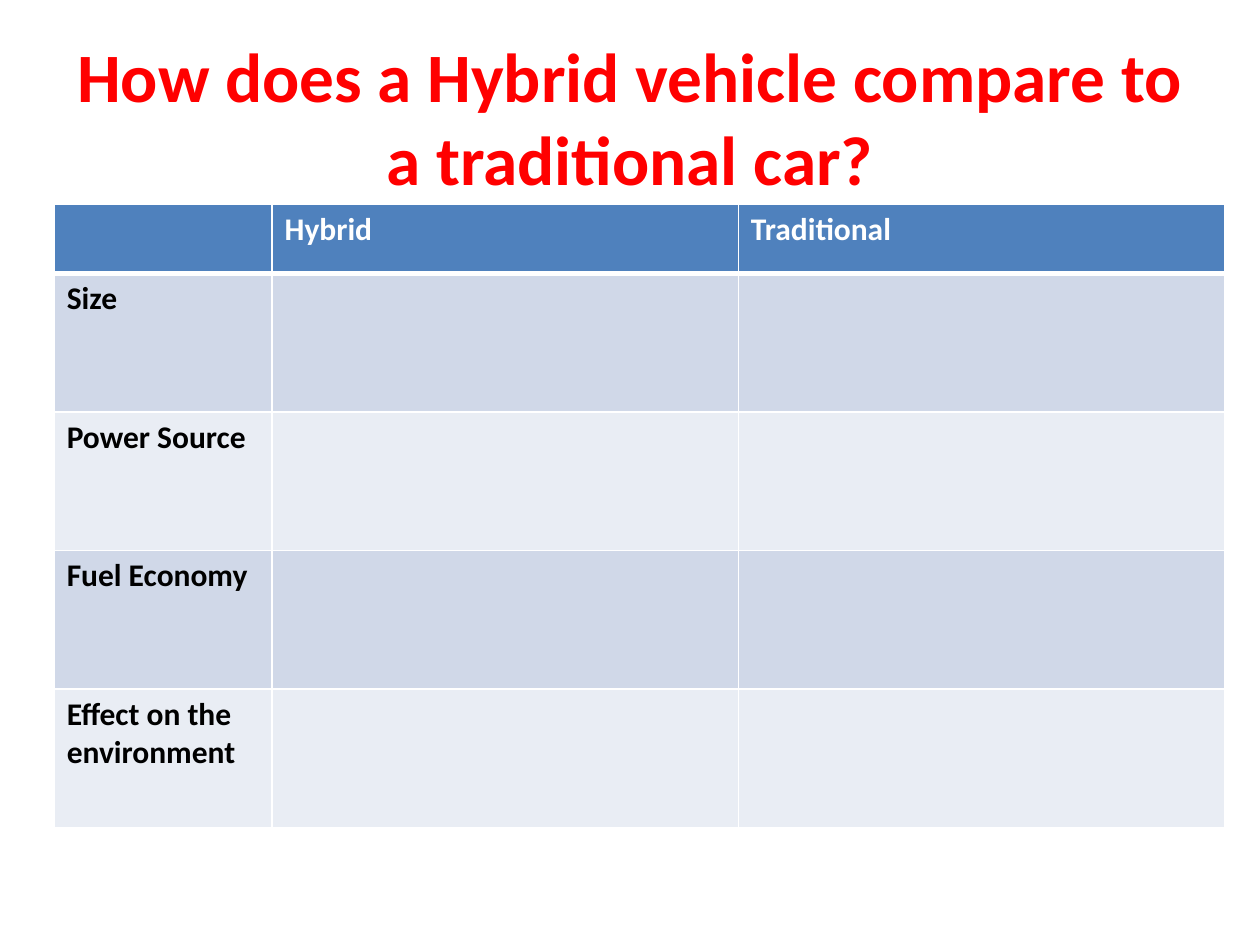
import pptx
import pptx.dml.color
import pptx.enum.text
import pptx.oxml
import pptx.oxml.ns
import pptx.util
from pptx.util import Inches

WHITE = "FFFFFF"
HEADER_FILL = "4F81BD"
BAND_FILLS = ("D0D8E8", "E9EDF4")
COLUMN_WIDTHS = (1.73, 3.7, 3.86)
ROW_HEIGHTS = (0.55, 1.1, 1.1, 1.1, 1.1)
ROWS = (
    ("", "Hybrid", "Traditional"),
    ("Size", "", ""),
    ("Power Source", "", ""),
    ("Fuel Economy", "", ""),
    ("Effect on the environment", "", ""),
)


def color(value):
    """Turn a hex string into a colour."""
    return pptx.dml.color.RGBColor.from_string(value)


def style_font(font, size, value):
    """Apply the bold Calibri face in the given size and colour."""
    font.name = "Calibri"
    font.size = pptx.util.Pt(size)
    font.bold = True
    font.color.rgb = color(value)


def add_border(cell, side, width):
    """Draw a white line on one side (L, R, T or B) of a cell."""
    line = pptx.oxml.parse_xml(
        f'<a:ln{side} {pptx.oxml.ns.nsdecls("a")} w="{pptx.util.Pt(width)}">'
        f'<a:solidFill><a:srgbClr val="{WHITE}"/></a:solidFill></a:ln{side}>'
    )
    cell._tc.get_or_add_tcPr().append(line)


def place_title(page, text, left, top, width, height):
    """Fill the title placeholder and move it to its box."""
    title = page.shapes.title
    title.left, title.top, title.width, title.height = map(Inches, (left, top, width, height))
    frame = title.text_frame
    frame.text = text
    frame.word_wrap = True
    frame.auto_size = pptx.enum.text.MSO_AUTO_SIZE.NONE
    frame.vertical_anchor = pptx.enum.text.MSO_ANCHOR.MIDDLE
    para = frame.paragraphs[0]
    para.alignment = pptx.enum.text.PP_ALIGN.CENTER
    style_font(para.font, 39.6, "FF0000")


def format_cell(cell, text, row_index):
    """Write one cell with the borders, fill and font of its row."""
    is_header = row_index == 0
    next_to_header = row_index == 1
    for side, width in (("L", 1), ("R", 1), ("T", 3 if next_to_header else 1), ("B", 3 if is_header else 1)):
        add_border(cell, side, width)
    cell.fill.solid()
    cell.fill.fore_color.rgb = color(HEADER_FILL if is_header else BAND_FILLS[(row_index - 1) % 2])
    cell.text = text
    style_font(cell.text_frame.paragraphs[0].font, 18, WHITE if is_header else "000000")


def place_comparison_table(page, left, top):
    """Build the comparison table from its top left corner."""
    box = map(Inches, (left, top, sum(COLUMN_WIDTHS), sum(ROW_HEIGHTS)))
    table = page.shapes.add_table(len(ROWS), len(COLUMN_WIDTHS), *box).table
    for column, width in zip(table.columns, COLUMN_WIDTHS):
        column.width = Inches(width)
    for row_index, (row, height, texts) in enumerate(zip(table.rows, ROW_HEIGHTS, ROWS)):
        row.height = Inches(height)
        for cell, text in zip(row.cells, texts):
            format_cell(cell, text, row_index)


def main():
    """Build the slide and save the deck."""
    deck = pptx.Presentation()
    deck.slide_width, deck.slide_height = Inches(10), Inches(7.5)
    page = deck.slides.add_slide(deck.slide_layouts[5])
    place_title(page, "How does a Hybrid vehicle compare to a traditional car?", 0.5, 0.3, 9, 1.25)
    place_comparison_table(page, 0.43, 1.62)
    deck.save("out.pptx")


if __name__ == "__main__":
    main()
